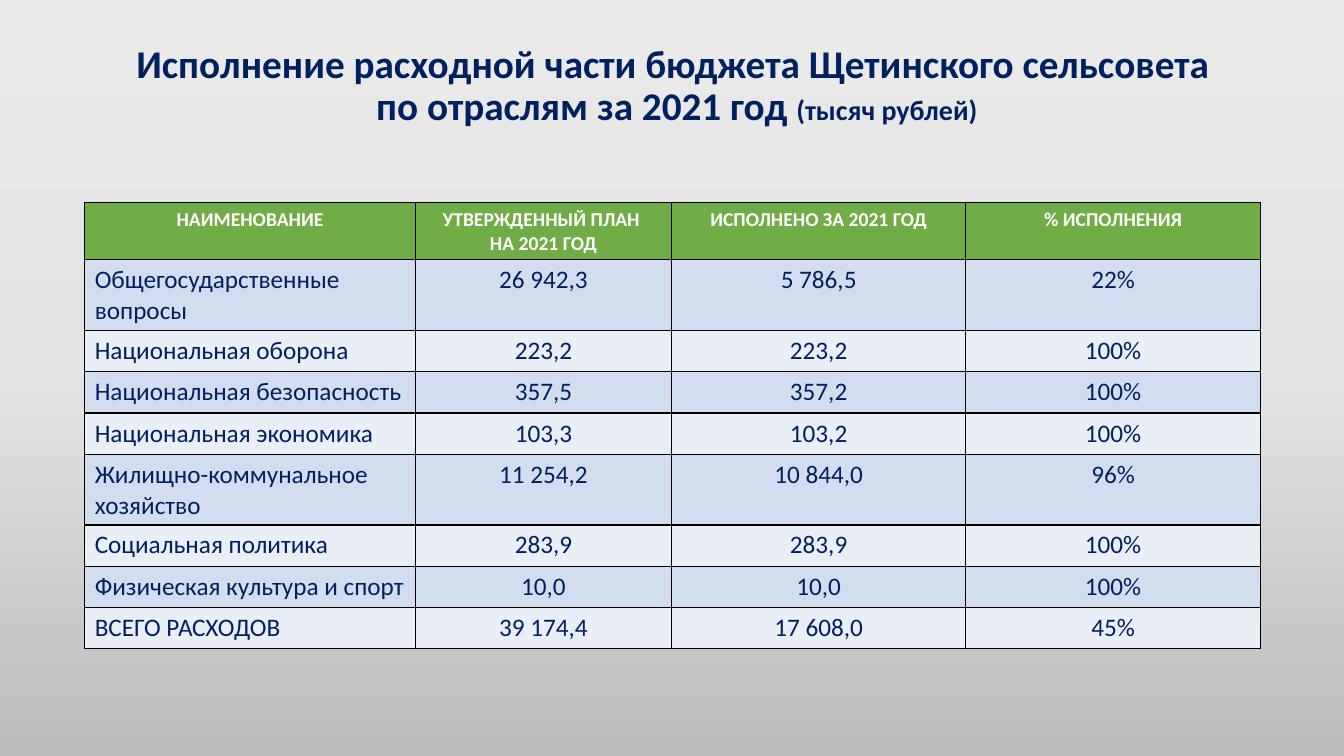
import pptx
import pptx.dml.color
import pptx.enum.text
import pptx.oxml
import pptx.oxml.ns
import pptx.util
from dataclasses import dataclass

Inches = pptx.util.Inches
PP_ALIGN = pptx.enum.text.PP_ALIGN

TITLE = "Исполнение расходной части бюджета Щетинского сельсовета\v по отраслям за 2021 год "
UNIT = "(тысяч рублей)"
HEADERS = ("НАИМЕНОВАНИЕ", "УТВЕРЖДЕННЫЙ ПЛАН \nНА 2021 ГОД", "ИСПОЛНЕНО ЗА 2021 ГОД", "% ИСПОЛНЕНИЯ")
EXPENSES = [
    ("Общегосударственные вопросы", "26 942,3", "5 786,5", "22%"),
    ("Национальная оборона", "223,2", "223,2", "100%"),
    ("Национальная безопасность", "357,5", "357,2", "100%"),
    ("Национальная экономика", "103,3", "103,2", "100%"),
    ("Жилищно-коммунальное хозяйство", "11 254,2", "10 844,0", "96%"),
    ("Социальная политика", "283,9", "283,9", "100%"),
    ("Физическая культура и спорт", "10,0", "10,0", "100%"),
    ("ВСЕГО РАСХОДОВ", "39 174,4", "17 608,0", "45%"),
]
COLUMN_WIDTHS = (3.28, 2.54, 2.92, 2.92)
HEADER_HEIGHT, ROW_HEIGHT = 0.43, 0.41


@dataclass(frozen=True)
class Theme:
    font: str = "Calibri"
    navy: str = "002060"
    white: str = "FFFFFF"
    header_fill: str = "70AD47"
    bands: tuple = ("D2DEEF", "EAEFF7")
    border: str = "000000"
    background: tuple = ((0, "EBEAEA"), (50, "E4E3E3"), (100, "BDBCBC"))
    title_size: int = 28
    unit_size: int = 20
    header_size: int = 14
    body_size: int = 18


THEME = Theme()


def rgb(value):
    return pptx.dml.color.RGBColor.from_string(value)


def style_run(run, size, color, bold):
    run.font.name = THEME.font
    run.font.size = pptx.util.Pt(size)
    run.font.color.rgb = rgb(color)
    run.font.bold = bold


def paint_background(slide):
    """Fill the background with the theme's vertical three-stop gradient."""
    slide.background.fill.gradient()
    gradient = next(slide.element.iter(pptx.oxml.ns.qn("a:gradFill")))
    stops = "".join(
        f'<a:gs pos="{percent * 1000}"><a:srgbClr val="{color}"/></a:gs>'
        for percent, color in THEME.background
    )
    for child in list(gradient):
        gradient.remove(child)
    namespace = pptx.oxml.ns.nsdecls("a")
    gradient.append(pptx.oxml.parse_xml(f"<a:gsLst {namespace}>{stops}</a:gsLst>"))
    gradient.append(pptx.oxml.parse_xml(f'<a:lin {namespace} ang="5400000" scaled="0"/>'))


def add_title(slide):
    frame = slide.shapes.add_textbox(Inches(0.92), Inches(0.4), Inches(11.5), Inches(0.92)).text_frame
    frame.word_wrap = True
    frame.vertical_anchor = pptx.enum.text.MSO_ANCHOR.MIDDLE
    heading = frame.paragraphs[0]
    heading.text = TITLE
    heading.alignment = PP_ALIGN.CENTER
    heading.line_spacing = 0.9
    for run in heading.runs:
        style_run(run, THEME.title_size, THEME.navy, True)
    unit = heading.add_run()
    unit.text = UNIT
    style_run(unit, THEME.unit_size, THEME.navy, True)


def add_borders(cell):
    properties = cell._tc.get_or_add_tcPr()
    for position, side in enumerate(("lnL", "lnR", "lnT", "lnB")):
        properties.insert(position, pptx.oxml.parse_xml(
            f'<a:{side} {pptx.oxml.ns.nsdecls("a")} w="12700"><a:solidFill>'
            f'<a:srgbClr val="{THEME.border}"/></a:solidFill></a:{side}>'
        ))


def fill_cell(cell, text, fill, size, color, bold, alignment):
    cell.fill.solid()
    cell.fill.fore_color.rgb = rgb(fill)
    add_borders(cell)
    cell.text_frame.text = text
    for paragraph in cell.text_frame.paragraphs:
        paragraph.alignment = alignment
        for run in paragraph.runs:
            style_run(run, size, color, bold)


def add_expense_table(slide):
    rows = [HEADERS, *EXPENSES]
    height = HEADER_HEIGHT + ROW_HEIGHT * len(EXPENSES)
    table = slide.shapes.add_table(
        len(rows), len(HEADERS), Inches(0.84), Inches(2.01),
        Inches(sum(COLUMN_WIDTHS)), Inches(height),
    ).table
    for column, width in zip(table.columns, COLUMN_WIDTHS):
        column.width = Inches(width)
    for r, values in enumerate(rows):
        is_header = r == 0
        table.rows[r].height = Inches(HEADER_HEIGHT if is_header else ROW_HEIGHT)
        if is_header:
            look = (THEME.header_fill, THEME.header_size, THEME.white, True)
        else:
            look = (THEME.bands[(r - 1) % 2], THEME.body_size, THEME.navy, False)
        for c, value in enumerate(values):
            alignment = PP_ALIGN.CENTER if is_header or c else PP_ALIGN.LEFT
            fill_cell(table.cell(r, c), value, *look, alignment)


def main():
    deck = pptx.Presentation()
    deck.slide_width, deck.slide_height = Inches(13.33), Inches(7.5)
    slide = deck.slides.add_slide(deck.slide_layouts[6])
    paint_background(slide)
    add_title(slide)
    add_expense_table(slide)
    deck.save("out.pptx")


if __name__ == "__main__":
    main()
